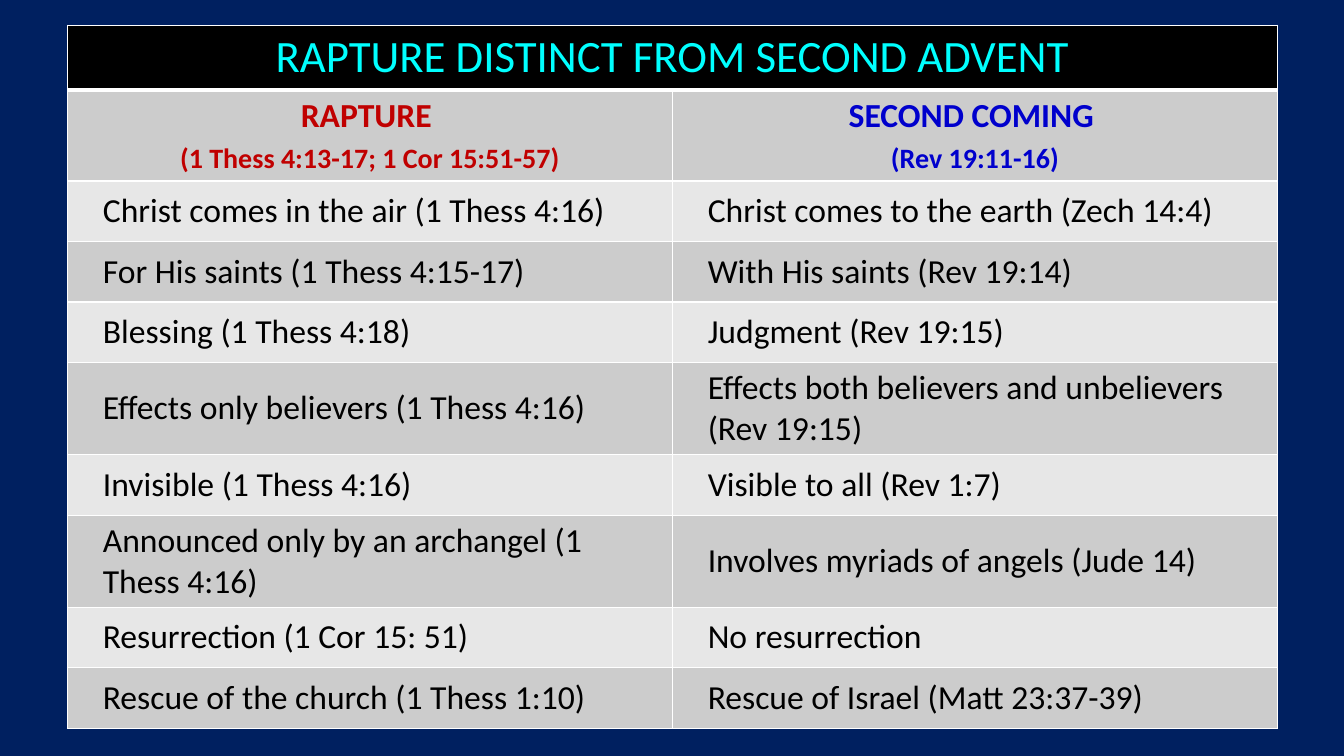
from dataclasses import dataclass

from lxml import etree
from pptx import Presentation
from pptx.dml.color import RGBColor
from pptx.enum.text import MSO_ANCHOR, PP_ALIGN
from pptx.oxml.ns import qn
from pptx.util import Inches, Pt

MIDDLE = MSO_ANCHOR.MIDDLE
CENTER = PP_ALIGN.CENTER
LEFT = PP_ALIGN.LEFT


@dataclass(frozen=True)
class Theme:
    font: str = "Calibri"
    back: str = "002060"
    line: str = "FFFFFF"
    banner: str = "000000"
    title: str = "00FFFF"
    dark: str = "CCCCCC"
    light: str = "E7E7E7"
    text: str = "000000"
    red: str = "C00000"
    blue: str = "0000CC"
    big: int = 32
    body: int = 24
    small: int = 20


THEME = Theme()
TITLE = "RAPTURE DISTINCT FROM SECOND ADVENT"
HEADS = [
    ("RAPTURE ", "(1 Thess 4:13-17; 1 Cor 15:51-57)", THEME.red),
    ("SECOND COMING ", "(Rev 19:11-16)", THEME.blue),
]
SINGLE, DOUBLE = 0.6, 0.91
PAIRS = [
    (SINGLE, "Christ comes in the air (1 Thess 4:16)", "Christ comes to the earth (Zech 14:4)"),
    (SINGLE, "For His saints (1 Thess 4:15-17)", "With His saints (Rev 19:14)"),
    (SINGLE, "Blessing (1 Thess 4:18)", "Judgment (Rev 19:15)"),
    (DOUBLE, "Effects only believers (1 Thess 4:16)",
     "Effects both believers and unbelievers (Rev 19:15)"),
    (SINGLE, "Invisible (1 Thess 4:16)", "Visible to all (Rev 1:7)"),
    (DOUBLE, "Announced only by an archangel (1 Thess 4:16)",
     "Involves myriads of angels (Jude 14)"),
    (SINGLE, "Resurrection (1 Cor 15: 51)", "No resurrection"),
    (SINGLE, "Rescue of the church (1 Thess 1:10)", "Rescue of Israel (Matt 23:37-39)"),
]


def style_cell(cell, fill, top=1, bottom=1):
    props = cell._tc.get_or_add_tcPr()
    for side, width in (("L", 1), ("R", 1), ("T", top), ("B", bottom)):
        line = etree.SubElement(props, qn(f"a:ln{side}"), w=str(Pt(width)))
        solid = etree.SubElement(line, qn("a:solidFill"))
        etree.SubElement(solid, qn("a:srgbClr"), val=THEME.line)
    cell.fill.solid()
    cell.fill.fore_color.rgb = RGBColor.from_string(fill)
    cell.vertical_anchor = MIDDLE


def add_text(para, text, size, color, bold=False, align=CENTER):
    para.alignment = align
    run = para.add_run()
    run.text = text
    font = run.font
    font.name = THEME.font
    font.size = Pt(size)
    font.bold = bold
    font.color.rgb = RGBColor.from_string(color)


def fill_title(table):
    for cell in table.rows[0].cells:
        style_cell(cell, THEME.banner, bottom=3)
    table.cell(0, 0).merge(table.cell(0, 1))
    para = table.cell(0, 0).text_frame.paragraphs[0]
    add_text(para, TITLE, THEME.big, THEME.title)


def fill_heads(table):
    for cell, (name, verse, color) in zip(table.rows[1].cells, HEADS):
        style_cell(cell, THEME.dark, top=3)
        frame = cell.text_frame
        add_text(frame.paragraphs[0], name, THEME.body, color, True)
        para = frame.add_paragraph()
        para.space_before = Pt(4)
        add_text(para, verse, THEME.small, color, True)


def fill_pairs(table):
    for i, (_, *texts) in enumerate(PAIRS):
        fill = THEME.dark if i % 2 else THEME.light
        for cell, text in zip(table.rows[i + 2].cells, texts):
            style_cell(cell, fill)
            para = cell.text_frame.paragraphs[0]
            para._p.get_or_add_pPr().set("marL", str(Inches(0.25)))
            add_text(para, text, THEME.body, THEME.text, align=LEFT)


def add_grid(slide, left, top, width):
    sizes = [0.64, 0.9] + [pair[0] for pair in PAIRS]
    frame = slide.shapes.add_table(
        len(sizes), len(HEADS), Inches(left), Inches(top),
        Inches(width), Inches(sum(sizes)))
    table = frame.table
    for row, size in zip(table.rows, sizes):
        row.height = Inches(size)
    for col in table.columns:
        col.width = Inches(width / len(HEADS))
    fill_title(table)
    fill_heads(table)
    fill_pairs(table)


def main():
    deck = Presentation()
    deck.slide_width = Inches(13.33)
    deck.slide_height = Inches(7.5)
    slide = deck.slides.add_slide(deck.slide_layouts[6])
    back = slide.background.fill
    back.solid()
    back.fore_color.rgb = RGBColor.from_string(THEME.back)
    add_grid(slide, 0.67, 0.25, 12)
    deck.save("out.pptx")


if __name__ == "__main__":
    main()
